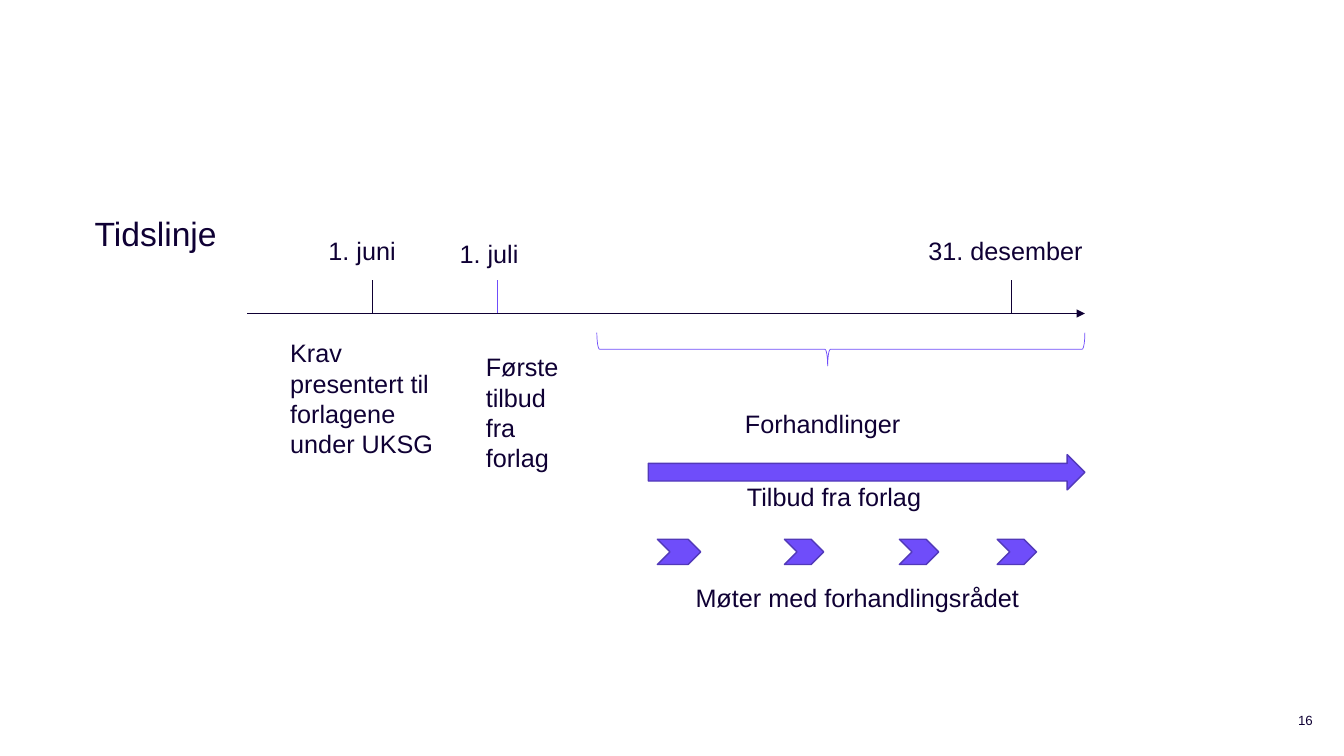
import collections
import dataclasses

import lxml.etree
import pptx
import pptx.dml.color
import pptx.enum.shapes
import pptx.enum.text
import pptx.oxml.ns
import pptx.util

Inches = pptx.util.Inches
Kind = pptx.enum.shapes.MSO_SHAPE
Anchor = pptx.enum.text.MSO_ANCHOR
Align = pptx.enum.text.PP_ALIGN
Box = collections.namedtuple("Box", "x y w h")


@dataclasses.dataclass(frozen=True)
class Theme:
    face: str = "Arial"
    ink: str = "0F0034"
    fill: str = "6F4DFA"
    edge: str = "5239B9"
    head: float = 24
    body: float = 18
    note: float = 9.5
    thin: float = 0.5
    rim: float = 1


THEME = Theme()


def color(code):
    return pptx.dml.color.RGBColor.from_string(code)


def apply(target, style):
    for name, value in style.items():
        setattr(target, name, value)


def write(slide, text, box, size=THEME.body, frame=None, para=None):
    """Add a text box; frame and para hold extra format values."""
    area = slide.shapes.add_textbox(*map(Inches, box)).text_frame
    apply(area, {"word_wrap": True, **(frame or {})})
    line = area.paragraphs[0]
    apply(line, para or {})
    run = line.add_run()
    run.text = text
    apply(run.font, {"name": THEME.face, "size": pptx.util.Pt(size)})
    run.font.color.rgb = color(THEME.ink)


def stroke(line, code, width):
    line.color.rgb = color(code)
    line.width = pptx.util.Pt(width)


def rule(slide, start, end, code=THEME.ink, arrow=False):
    link = slide.shapes.add_connector(
        pptx.enum.shapes.MSO_CONNECTOR.STRAIGHT, *map(Inches, (*start, *end)))
    stroke(link.line, code, THEME.thin)
    qn = pptx.oxml.ns.qn
    if arrow:
        tail = lxml.etree.SubElement(link.line._get_or_add_ln(), qn("a:tailEnd"))
        tail.set("type", "triangle")
    lxml.etree.SubElement(link._element.spPr, qn("a:effectLst"))


def solid(slide, kind, box):
    shape = slide.shapes.add_shape(kind, *map(Inches, box))
    shape.shadow.inherit = False
    shape.fill.solid()
    shape.fill.fore_color.rgb = color(THEME.fill)
    stroke(shape.line, THEME.edge, THEME.rim)


def brace(slide, box):
    """Add a brace that spans the box and points down."""
    mid_x, mid_y = box.x + box.w / 2, box.y + box.h / 2
    shape = slide.shapes.add_shape(Kind.LEFT_BRACE, *map(Inches, (
        mid_x - box.h / 2, mid_y - box.w / 2, box.h, box.w)))
    shape.rotation = 270
    shape.adjustments[0], shape.adjustments[1] = 0.083, 0.473
    shape.shadow.inherit = False
    shape.fill.background()
    stroke(shape.line, THEME.fill, THEME.thin)


def title(slide, box):
    write(slide, "Tidslinje", box, THEME.head,
          {"vertical_anchor": Anchor.BOTTOM}, {"line_spacing": 0.9})


def axis(slide, box):
    """Draw the time line along the foot of the box, with dated ticks."""
    foot = box.y + box.h
    rule(slide, (box.x, foot), (box.x + box.w, foot), arrow=True)
    dates = [
        ("1. juni", 1.24, THEME.ink, 0.71, 0, 1.04),
        ("1. juli", 2.48, THEME.fill, 2.01, 0.03, 0.83),
        ("31. desember", 7.58, THEME.ink, 6.66, 0, 1.84),
    ]
    for text, tick, code, left, top, width in dates:
        x = box.x + tick
        rule(slide, (x, foot - 0.33), (x, foot), code)
        write(slide, text, Box(box.x + left, box.y + top, width, 0.4))


def steps(slide, box):
    write(slide, "Krav presentert til forlagene under UKSG",
          Box(box.x, box.y, 1.69, 1.31))
    write(slide, "Første tilbud fra forlag",
          Box(box.x + 1.94, box.y + 0.14, 1.07, 1.31))


def talks(slide, box):
    """Draw the brace and, below it, the offers and the meetings."""
    brace(slide, Box(box.x, box.y, box.w, 0.33))
    solid(slide, Kind.RIGHT_ARROW,
          Box(box.x + 0.51, box.y + 1.21, box.w - 0.51, 0.35))
    labels = [
        ("Forhandlinger", 1.37, 0.7, 2.74),
        ("Tilbud fra forlag", 1.39, 1.43, 2.58),
        ("Møter med forhandlingsrådet", 0.88, 2.43, 3.79),
    ]
    for text, left, top, width in labels:
        write(slide, text, Box(box.x + left, box.y + top, width, 0.4))
    for left, width in ((0.6, 0.43), (1.86, 0.39), (3, 0.39), (3.97, 0.39)):
        solid(slide, Kind.CHEVRON, Box(box.x + left, box.y + 2.05, width, 0.25))


def number(slide, box):
    write(slide, "16", box, THEME.note,
          {"vertical_anchor": Anchor.MIDDLE}, {"alignment": Align.RIGHT})


def main():
    deck = pptx.Presentation()
    apply(deck, {"slide_width": Inches(13.33), "slide_height": Inches(7.5)})
    slide = deck.slides.add_slide(deck.slide_layouts[6])
    title(slide, Box(0.84, 1.7, 4.09, 0.87))
    axis(slide, Box(2.45, 2.29, 8.31, 0.82))
    steps(slide, Box(2.78, 3.3, 3.01, 1.45))
    talks(slide, Box(5.92, 3.3, 4.84, 2.83))
    number(slide, Box(10.12, 6.95, 3, 0.4))
    deck.save("out.pptx")


if __name__ == "__main__":
    main()
